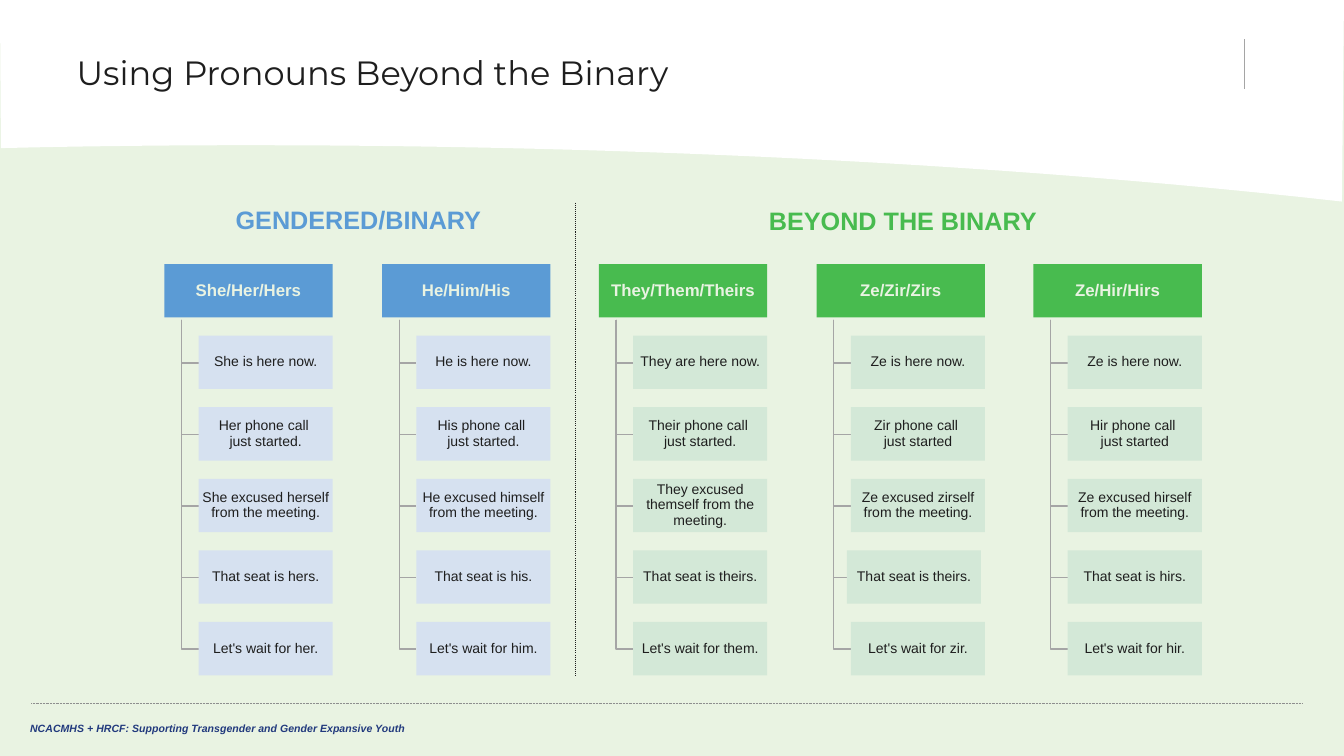
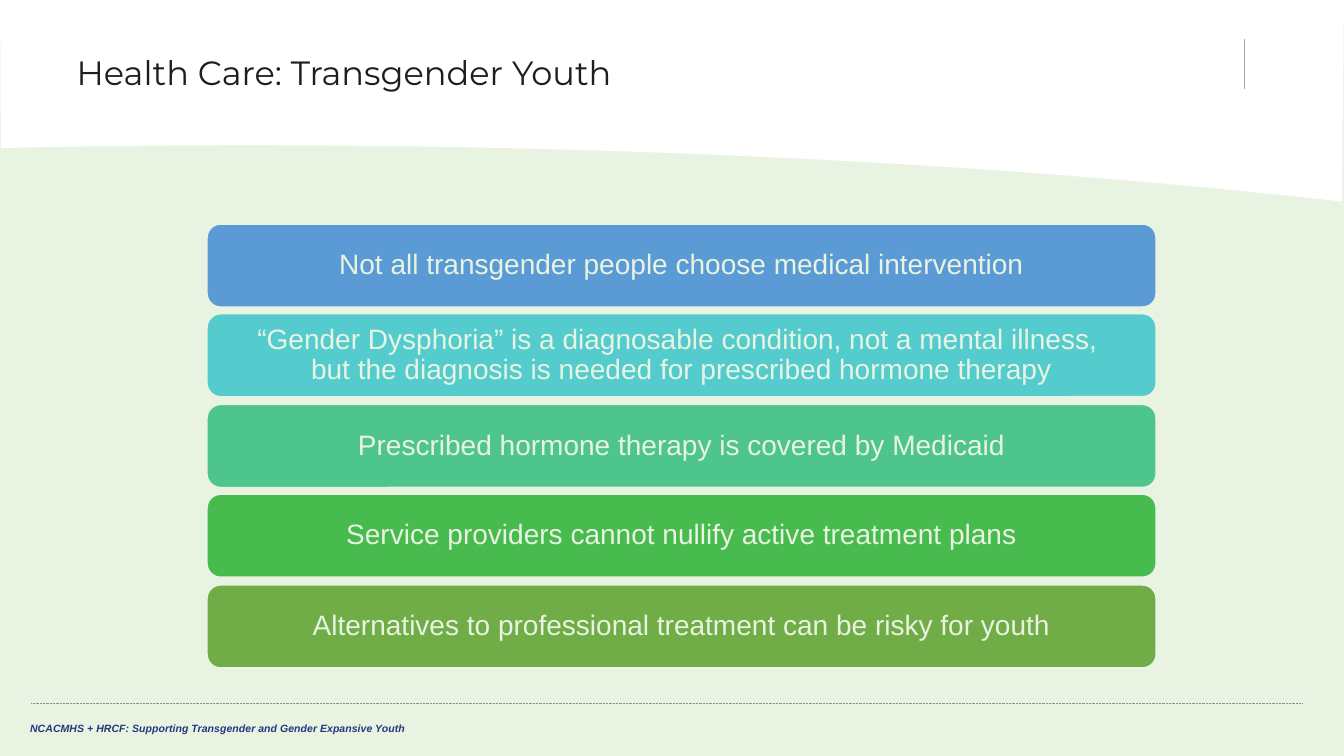
from lxml.etree import SubElement
from pptx import Presentation
from pptx.dml.color import RGBColor
from pptx.enum.dml import MSO_LINE
from pptx.enum.shapes import MSO_CONNECTOR, MSO_SHAPE, PP_PLACEHOLDER
from pptx.enum.text import MSO_ANCHOR, MSO_AUTO_SIZE, PP_ALIGN
from pptx.oxml.ns import qn
from pptx.util import Pt

PX = 9144  # EMU per px, 100 px to the inch
SLIDE_WIDTH, SLIDE_HEIGHT = 1333, 750

WHITE = RGBColor(0xFF, 0xFF, 0xFF)
INK = RGBColor(0x1E, 0x1E, 0x1E)
NAVY = RGBColor(0x21, 0x39, 0x7D)
PALE_GREEN = RGBColor(0xE9, 0xF3, 0xE2)
GRAY = RGBColor(0xA5, 0xA5, 0xA5)
DARK_GRAY = RGBColor(0x8E, 0x8E, 0x8E)
BLUE = RGBColor(0x5B, 0x9B, 0xD5)
LIGHT_BLUE = RGBColor(0xD6, 0xE1, 0xF0)
GREEN = RGBColor(0x48, 0xBB, 0x4F)
LIGHT_GREEN = RGBColor(0xD3, 0xE8, 0xD7)
TURQUOISE = RGBColor(0x54, 0xCC, 0xCD)
SEA_GREEN = RGBColor(0x4D, 0xC5, 0x8D)
OLIVE = RGBColor(0x70, 0xAD, 0x47)

BODY_FONT = "Arial"
TITLE_FONT = "Montserrat"
FOOTER = "NCACMHS + HRCF: Supporting Transgender and Gender Expansive Youth"

# Pronoun chart: header, its colour, card colour, sentences
PRONOUNS = [
    ("She/Her/Hers", BLUE, LIGHT_BLUE, [
        "She is here now.", "Her phone call \vjust started.",
        "She excused herself from the meeting.",
        "That seat is hers.", "Let's wait for her."]),
    ("He/Him/His", BLUE, LIGHT_BLUE, [
        "He is here now.", "His phone call \vjust started.",
        "He excused himself from the meeting.",
        "That seat is his.", "Let's wait for him."]),
    ("They/Them/Theirs", GREEN, LIGHT_GREEN, [
        "They are here now.", "Their phone call \vjust started.",
        "They excused themself from the meeting.",
        "That seat is theirs.", "Let's wait for them."]),
    ("Ze/Zir/Zirs", GREEN, LIGHT_GREEN, [
        "Ze is here now.", "Zir phone call \vjust started",
        "Ze excused zirself from the meeting.",
        "That seat is theirs.", "Let's wait for zir."]),
    ("Ze/Hir/Hirs", GREEN, LIGHT_GREEN, [
        "Ze is here now.", "Hir phone call \vjust started",
        "Ze excused hirself from the meeting.",
        "That seat is hirs.", "Let's wait for hir."]),
]
COLUMN_LEFT, HEADER_TOP, HEADER_WIDTH = 163, 262, 167
CARD_INDENT, CARD_WIDTH, BOX_HEIGHT, ROW_PITCH = 34, 133, 53, 71
TRUNK_INDENT, TRUNK_TOP = 17, 317
CARD_NUDGE = {(3, 4): -4}  # (column, row): shift in px

HEALTH_CARE = [
    ("Not all transgender people choose medical intervention", BLUE),
    ("“Gender Dysphoria” is a diagnosable condition, not a mental illness, "
     "\vbut the diagnosis is needed for prescribed hormone therapy", TURQUOISE),
    ("Prescribed hormone therapy is covered by Medicaid", SEA_GREEN),
    ("Service providers cannot nullify active treatment plans", GREEN),
    ("Alternatives to professional treatment can be risky for youth", OLIVE),
]


def px(*lengths):
    return [length * PX for length in lengths]


def set_text(shape, text, size, color, font=BODY_FONT, bold=False, italic=False,
             align=PP_ALIGN.CENTER, anchor=MSO_ANCHOR.MIDDLE, spacing=None,
             insets=(10, 5)):
    frame = shape.text_frame
    frame.text = text
    frame.word_wrap = True
    frame.auto_size = MSO_AUTO_SIZE.NONE
    frame.vertical_anchor = anchor
    frame.margin_left = frame.margin_right = insets[0] * PX
    frame.margin_top = frame.margin_bottom = insets[1] * PX
    paragraph = frame.paragraphs[0]
    paragraph.alignment = align
    paragraph.line_spacing = spacing
    for run in paragraph.runs:
        run.font.name, run.font.size = font, Pt(size)
        run.font.bold, run.font.italic = bold, italic
        run.font.color.rgb = color
    # Line breaks take the text size so they do not stretch the line
    for line_break in shape.element.iter(qn("a:br")):
        SubElement(line_break, qn("a:rPr"), sz=str(size * 100))


def add_label(slide, left, top, width, height, text, size, color, **style):
    label = slide.shapes.add_textbox(*px(left, top, width, height))
    set_text(label, text, size, color, anchor=MSO_ANCHOR.TOP, **style)
    return label


def add_box(slide, kind, left, top, width, height, fill, outline=None):
    box = slide.shapes.add_shape(kind, *px(left, top, width, height))
    box.shadow.inherit = False
    box.fill.solid()
    box.fill.fore_color.rgb = fill
    if outline:
        box.line.color.rgb, box.line.width = outline, Pt(1.5)
    else:
        box.line.fill.background()
    return box


def add_line(slide, x1, y1, x2, y2, color, width, dash=None):
    line = slide.shapes.add_connector(MSO_CONNECTOR.STRAIGHT, *px(x1, y1, x2, y2))
    line.line.color.rgb, line.line.width = color, Pt(width)
    if dash:
        line.line.dash_style = dash
    SubElement(line.element.find(qn("p:spPr")), qn("a:effectLst"))
    return line


def add_branch(slide, x, top, bottom, end_x):
    """An L-shaped line: down, then right."""
    builder = slide.shapes.build_freeform(x, top, scale=PX)
    builder.add_line_segments([(x, bottom), (end_x, bottom)], close=False)
    branch = builder.convert_to_shape()
    branch.shadow.inherit = False
    branch.fill.background()
    branch.line.color.rgb, branch.line.width = GRAY, Pt(1)


def bezier(points, steps=40):
    """Points along a cubic curve, without its start."""
    for step in range(1, steps + 1):
        t = step / steps
        weights = ((1 - t) ** 3, 3 * t * (1 - t) ** 2, 3 * t * t * (1 - t), t ** 3)
        yield tuple(round(PX * sum(w * point[axis] for w, point in zip(weights, points)))
                    for axis in (0, 1))


def add_title_band(slide):
    curve = [(1331, 200), (762, 136), (207, 142), (1, 147)]
    builder = slide.shapes.build_freeform(0, 0)
    builder.add_line_segments(
        [px(SLIDE_WIDTH, 0), px(*curve[0]), *bezier(curve)], close=True)
    band = builder.convert_to_shape()
    band.shadow.inherit = False
    band.fill.solid()
    band.fill.fore_color.rgb = WHITE
    band.line.fill.background()
    return band


def furnish_layout(layout, slide):
    """Draw the shared parts on a slide and move them to its layout."""
    for placeholder in list(layout.placeholders):
        if placeholder.placeholder_format.type != PP_PLACEHOLDER.TITLE:
            layout.shapes.element.remove(placeholder.element)
    shared = [
        add_title_band(slide),
        add_line(slide, 31, 698, 1291, 698, DARK_GRAY, 0.5, MSO_LINE.ROUND_DOT),
        add_label(slide, 20, 711, 672, 23, FOOTER, 7.5, NAVY,
                  bold=True, italic=True, align=PP_ALIGN.LEFT),
        add_line(slide, 1234, 88, 1234, 39, GRAY, 0.5),
    ]
    for shape in shared:
        layout.shapes.element.append(shape.element)


def set_title(slide, text):
    title = slide.shapes.title
    title.left, title.top, title.width, title.height = px(66, 0, 1131, 147)
    set_text(title, text, 24, INK, font=TITLE_FONT, align=PP_ALIGN.LEFT, spacing=0.9)


def add_pronoun_box(slide, left, top, width, fill, text, size, color, bold=False):
    box = add_box(slide, MSO_SHAPE.RECTANGLE, left, top, width, BOX_HEIGHT, fill)
    set_text(box, text, size, color, bold=bold, spacing=0.9, insets=(2, 1))


def add_pronoun_column(slide, column, header, header_fill, card_fill, sentences):
    left = COLUMN_LEFT + (column * 431 + 1) // 2
    add_pronoun_box(slide, left, HEADER_TOP, HEADER_WIDTH, header_fill,
                    header, 12, PALE_GREEN, bold=True)
    for row, sentence in enumerate(sentences, start=1):
        card_left = left + CARD_INDENT
        top = HEADER_TOP + row * ROW_PITCH
        add_branch(slide, left + TRUNK_INDENT, TRUNK_TOP,
                   top + (BOX_HEIGHT + 1) // 2, card_left)
        add_pronoun_box(slide, card_left + CARD_NUDGE.get((column, row), 0), top,
                        CARD_WIDTH, card_fill, sentence, 10, INK)


def fill_pronoun_slide(slide):
    set_title(slide, "Using Pronouns Beyond the Binary")
    add_label(slide, 163, 198, 385, 40, "GENDERED/BINARY", 18, BLUE, bold=True)
    add_label(slide, 594, 199, 603, 40, "BEYOND THE BINARY", 18, GREEN, bold=True)
    for column, content in enumerate(PRONOUNS):
        add_pronoun_column(slide, column, *content)
    add_line(slide, 571, 201, 571, 671, INK, 0.75, MSO_LINE.ROUND_DOT)


def fill_health_slide(slide):
    set_title(slide, "Health Care: Transgender Youth")
    for index, (statement, fill) in enumerate(HEALTH_CARE):
        bar = add_box(slide, MSO_SHAPE.ROUNDED_RECTANGLE,
                      205, 222 + index * 179 // 2, 942, 83, fill, PALE_GREEN)
        set_text(bar, statement, 20, PALE_GREEN, spacing=0.9, insets=(8, 8))


def main():
    presentation = Presentation()
    presentation.slide_width, presentation.slide_height = px(SLIDE_WIDTH, SLIDE_HEIGHT)
    background = presentation.slide_master.background.fill
    background.solid()
    background.fore_color.rgb = PALE_GREEN

    layout = presentation.slide_layouts.get_by_name("Title Only")
    pronoun_slide = presentation.slides.add_slide(layout)
    furnish_layout(layout, pronoun_slide)
    fill_pronoun_slide(pronoun_slide)
    fill_health_slide(presentation.slides.add_slide(layout))
    presentation.save("out.pptx")


if __name__ == "__main__":
    main()
